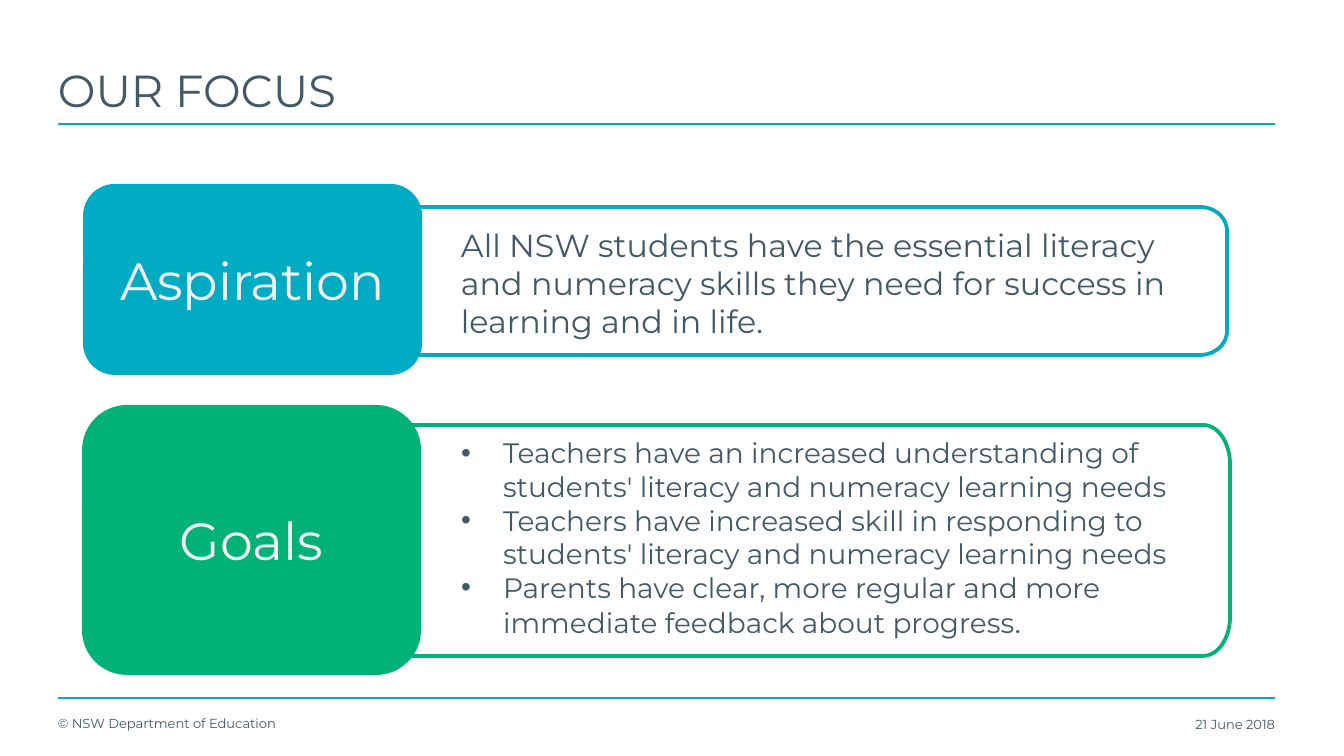
import math

from lxml import etree
from pptx import Presentation
from pptx import util as u
from pptx.dml.color import RGBColor
from pptx.enum import shapes, text
from pptx.oxml import ns

EMU_PER_PX = 914400 / 134.4
FONT = "Montserrat"
TEAL = "00ABC3"
GREEN = "00B178"
SLATE = "425968"
PALE = "F2F2F2"
WHITE = "FFFFFF"
LEFT, RIGHT = 58, 1275


def px(length):
    return u.Emu(round(length * EMU_PER_PX))


def colour(value):
    return RGBColor.from_string(value)


def add_bullet(para, indent):
    properties = para._p.get_or_add_pPr()
    properties.set("marL", str(px(indent)))
    properties.set("indent", str(-px(indent)))
    font = etree.SubElement(properties, ns.qn("a:buFont"))
    font.set("typeface", "Arial")
    etree.SubElement(properties, ns.qn("a:buChar")).set("char", "•")


def write(shape, paragraphs, size=17, fill=SLATE, align=text.PP_ALIGN.LEFT,
          anchor=text.MSO_ANCHOR.TOP, insets=(13, 7, 13, 7), bullet_indent=0):
    frame = shape.text_frame
    frame.word_wrap = True
    frame.vertical_anchor = anchor
    frame.margin_left, frame.margin_top, frame.margin_right, frame.margin_bottom = map(px, insets)
    for index, spans in enumerate(paragraphs):
        para = frame.add_paragraph() if index else frame.paragraphs[0]
        para.alignment = align
        if bullet_indent:
            add_bullet(para, bullet_indent)
        for words, span_size in spans:
            span = para.add_run()
            span.text = words
            span.font.name = FONT
            span.font.size = u.Pt(span_size or size)
            span.font.color.rgb = colour(fill)


def add_text(page, bounds, paragraphs, **style):
    box = page.shapes.add_textbox(*map(px, bounds))
    write(box, paragraphs, **style)


def add_rule(page, y):
    rule = page.shapes.add_connector(shapes.MSO_CONNECTOR.STRAIGHT, px(LEFT), px(y), px(RIGHT), px(y))
    rule.line.color.rgb = colour(TEAL)
    rule.line.width = u.Pt(1)
    etree.SubElement(rule._element.spPr, ns.qn("a:effectLst"))


def corner(center_x, center_y, radius_x, radius_y, start):
    angles = [math.radians(start + 5 * step) for step in range(19)]
    return [(px(center_x + radius_x * math.cos(angle)), px(center_y + radius_y * math.sin(angle)))
            for angle in angles]


def add_panel(page, left, top, right, bottom, radius_y, outline):
    radius_x = 27
    center_x = right - radius_x
    points = corner(center_x, top + radius_y, radius_x, radius_y, -90)
    points += corner(center_x, bottom - radius_y, radius_x, radius_y, 0)
    points.append((px(left), px(bottom)))
    builder = page.shapes.build_freeform(px(left), px(top))
    builder.add_line_segments(points, close=True)
    panel = builder.convert_to_shape()
    panel.shadow.inherit = False
    panel.fill.solid()
    panel.fill.fore_color.rgb = colour(WHITE)
    tint = panel._element.spPr.find(ns.qn("a:solidFill"))[0]
    etree.SubElement(tint, ns.qn("a:alpha")).set("val", "90000")
    panel.line.color.rgb = colour(outline)
    panel.line.width = u.Pt(2)


def add_label(page, bounds, words, fill):
    label = page.shapes.add_shape(shapes.MSO_SHAPE.ROUNDED_RECTANGLE, *map(px, bounds))
    label.shadow.inherit = False
    label.fill.solid()
    label.fill.fore_color.rgb = colour(fill)
    label.line.fill.background()
    write(label, [[(words, 28)]], fill=PALE, align=text.PP_ALIGN.CENTER,
          anchor=text.MSO_ANCHOR.MIDDLE)


def main():
    deck = Presentation()
    deck.slide_width, deck.slide_height = px(1344), px(756)
    page = deck.slides.add_slide(deck.slide_layouts[6])

    for y in (124, 698):
        add_rule(page, y)
    bottom = text.MSO_ANCHOR.BOTTOM
    add_text(page, (LEFT, 40, RIGHT - LEFT, 83), [[("OUR FOCUS", 24)]],
             anchor=bottom, insets=(0, 7, 13, 7))

    add_panel(page, 376, 207, 1227, 355, 24, TEAL)
    add_panel(page, 379, 425, 1230, 656, 39, GREEN)
    add_label(page, (83, 184, 339, 191), "Aspiration", TEAL)
    add_label(page, (82, 405, 339, 270), "Goals", GREEN)

    aspiration = ("All NSW students have the essential literacy and numeracy skills "
                  "they need for success in learning and in life.")
    goals = [
        [("Teachers have an increased understanding of students' literacy and numeracy learning needs", None)],
        [("Teachers have increased skill in responding to students' literacy and numeracy learning needs", None)],
        [("Parents have clear, more regular and more immediate feedback about progress", None), (".", 16)],
    ]
    add_text(page, (448, 219, 770, 129), [[(aspiration, None)]])
    add_text(page, (448, 429, 751, 251), goals, size=15, bullet_indent=42)

    add_text(page, (LEFT, 698, 402, 40), [[("© NSW Department of Education", 7)]],
             anchor=bottom, insets=(0, 7, 13, 7))
    add_text(page, (RIGHT - 243, 699, 243, 40), [[("21 June 2018", 7)]],
             align=text.PP_ALIGN.RIGHT, anchor=bottom, insets=(13, 7, 0, 7))
    deck.save("out.pptx")


if __name__ == "__main__":
    main()
